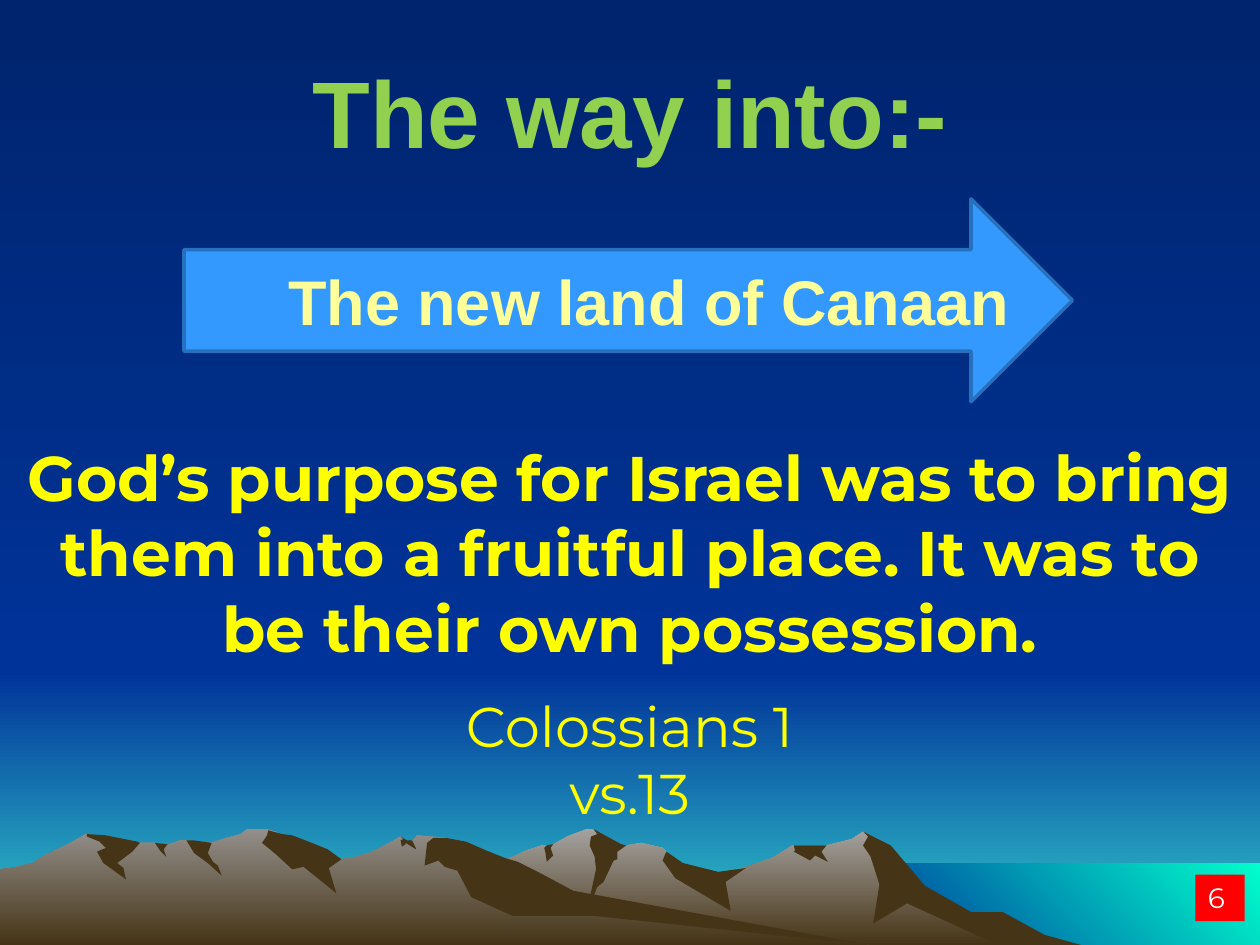
from dataclasses import dataclass

from pptx import Presentation
from pptx.dml.color import RGBColor
from pptx.enum.shapes import MSO_SHAPE
from pptx.enum.text import MSO_ANCHOR, PP_ALIGN
from pptx.util import Cm, Pt


@dataclass(frozen=True)
class Theme:
    """Colours, fonts and type sizes of the slide."""
    backdrop: tuple = ("001847", "003399")
    upper_sky: tuple = ("00246D", "003399")
    horizon: tuple = ("003399", "33CCCC")
    sea: tuple = ("003399", "00FFCC")
    far_range: tuple = ("A5A29F", "463416")
    near_range: tuple = ("938F8B", "463416")
    shade: str = "463416"
    heading: str = "92D050"
    arrow: str = "3399FF"
    arrow_edge: str = "2671BD"
    arrow_text: str = "FFFF99"
    verse: str = "FFFF00"
    badge: str = "FF0000"
    badge_text: str = "FFFFFF"
    plain: str = "Arial"
    display: str = "Montserrat"
    heading_size: int = 54
    main_size: int = 36
    reference_size: int = 32
    badge_size: int = 16


THEME = Theme()
GRID = Cm(2.54) / 100
DOWN, UP_RIGHT = 270, 45

SKY = [
    ([(0, 533), (1000, 533), (1000, 750), (0, 750)], THEME.horizon, DOWN),
    ([(0, 0), (1000, 0), (1000, 533), (0, 533)], THEME.upper_sky, DOWN),
    ([(683, 685), (1000, 685), (1000, 750), (683, 750)], THEME.sea, UP_RIGHT),
]
FAR_RANGE = [
    (802, 740), (778, 727), (764, 723), (723, 698), (702, 671), (685, 660), (676, 666),
    (656, 671), (629, 671), (613, 681), (566, 697), (536, 690), (529, 676), (526, 673),
    (509, 669), (497, 671), (486, 673), (474, 661), (471, 658), (465, 658), (450, 664),
    (438, 671), (430, 671), (418, 675), (405, 681), (394, 685), (355, 698), (327, 709),
    (277, 739), (258, 750), (820, 750),
]
FAR_SHADES = [
    [(796, 724), (771, 724), (734, 703), (707, 671), (685, 660), (689, 664), (685, 671),
     (691, 680), (698, 702), (693, 733), (720, 717), (792, 750), (858, 750), (829, 742)],
    [(471, 658), (474, 662), (469, 664), (468, 671), (472, 680), (473, 690), (465, 727),
     (474, 704), (479, 700), (487, 683), (490, 682), (490, 676), (497, 671), (493, 670)],
    [(529, 676), (528, 678), (526, 683), (536, 697), (580, 723), (576, 700), (592, 689),
     (570, 692), (542, 685)],
    [(650, 671), (630, 671), (631, 675), (630, 676), (643, 683), (647, 679), (657, 684),
     (652, 676), (656, 671)],
    [(433, 677), (432, 673), (434, 671), (439, 670), (437, 673), (439, 679), (434, 684)],
]
NEAR_RANGE = [
    (690, 750), (667, 748), (432, 712), (354, 665), (331, 663), (327, 668), (323, 668),
    (318, 664), (296, 676), (279, 681), (271, 682), (260, 676), (236, 681), (223, 663),
    (219, 660), (212, 658), (196, 658), (191, 662), (180, 665), (160, 671), (148, 667),
    (143, 667), (132, 671), (128, 671), (123, 669), (111, 669), (94, 671), (68, 662),
    (56, 669), (46, 674), (35, 679), (26, 685), (14, 688), (0, 690), (0, 750),
]
NEAR_SHADES = [
    [(212, 663), (208, 669), (219, 678), (232, 690), (241, 688), (267, 709), (261, 689),
     (271, 682), (260, 674), (245, 668), (232, 663), (224, 662), (213, 659)],
    [(370, 668), (354, 665), (344, 665), (339, 669), (337, 687), (348, 683), (353, 688),
     (363, 691), (374, 712), (407, 727), (472, 727), (690, 750), (455, 707), (427, 692),
     (411, 684), (401, 681), (386, 675)],
    [(318, 667), (320, 666), (318, 664), (323, 667), (327, 667), (330, 673), (330, 674),
     (322, 669), (322, 670), (319, 672)],
    [(154, 667), (168, 669), (165, 677), (169, 684), (173, 687), (176, 695), (165, 685),
     (154, 677), (148, 667)],
    [(133, 670), (130, 674), (132, 680), (127, 675), (123, 669)],
    [(109, 668), (111, 669), (105, 676), (93, 685), (98, 689), (100, 698), (82, 685),
     (77, 676), (84, 673), (79, 668), (69, 664), (69, 662), (84, 663), (94, 665)],
]


def rgb(value):
    """Turn a hex string into a colour."""
    return RGBColor.from_string(value)


def paint(fill, colours, angle=DOWN):
    """Apply a solid colour or a two-stop gradient to a fill."""
    if isinstance(colours, str):
        fill.solid()
        fill.fore_color.rgb = rgb(colours)
        return
    fill.gradient()
    fill.gradient_angle = angle
    for stop, colour in zip(fill.gradient_stops, colours):
        stop.color.rgb = rgb(colour)


def add_outline(slide, points, colours, angle=DOWN):
    """Draw a closed, borderless outline from grid points."""
    builder = slide.shapes.build_freeform(*points[0], scale=GRID)
    builder.add_line_segments(points[1:], close=True)
    outline = builder.convert_to_shape()
    outline.shadow.inherit = False
    outline.line.fill.background()
    paint(outline.fill, colours, angle)


def add_landscape(slide):
    """Draw the sky, the sea and the two mountain ranges."""
    for points, colours, angle in SKY:
        add_outline(slide, points, colours, angle)
    ranges = [(FAR_RANGE, THEME.far_range, FAR_SHADES),
              (NEAR_RANGE, THEME.near_range, NEAR_SHADES)]
    for ridge, colours, shades in ranges:
        add_outline(slide, ridge, colours)
        for shade in shades:
            add_outline(slide, shade, THEME.shade)


def write(holder, wording, colour, font, align=PP_ALIGN.CENTER, anchor=MSO_ANCHOR.TOP):
    """Put one formatted paragraph into a text holder."""
    frame = holder.text_frame
    frame.word_wrap = True
    frame.vertical_anchor = anchor
    paragraph = frame.paragraphs[0]
    paragraph.alignment = align
    run = paragraph.add_run()
    run.text = wording
    run.font.color.rgb = rgb(colour)
    for attribute, value in font.items():
        setattr(run.font, attribute, value)


def add_heading(slide, wording, box, font):
    """Place the title placeholder in front of the landscape."""
    heading = slide.shapes.title
    for attribute, value in zip(("left", "top", "width", "height"), box):
        setattr(heading, attribute, value)
    slide.shapes._spTree.append(heading._element)
    write(heading, wording, THEME.heading, font, anchor=MSO_ANCHOR.MIDDLE)


def add_panel(slide, preset, box, colour, edge=None):
    """Add a filled preset shape, with an edge if a colour is given."""
    panel = slide.shapes.add_shape(preset, *box)
    panel.shadow.inherit = False
    paint(panel.fill, colour)
    if edge:
        panel.line.color.rgb = rgb(edge)
        panel.line.width = Pt(2)
    else:
        panel.line.fill.background()
    return panel


def main():
    """Build and save the slide."""
    deck = Presentation()
    deck.slide_width, deck.slide_height = Cm(25.4), Cm(19.05)
    slide = deck.slides.add_slide(deck.slide_layouts[5])
    paint(slide.background.fill, THEME.backdrop)
    add_landscape(slide)

    heading_font = {"name": THEME.plain, "size": Pt(THEME.heading_size), "bold": True}
    arrow_font = {**heading_font, "size": Pt(THEME.main_size)}
    verse_font = {**arrow_font, "name": THEME.display}
    reference_font = {"name": THEME.display, "size": Pt(THEME.reference_size), "bold": False}
    badge_font = {**reference_font, "size": Pt(THEME.badge_size)}

    add_heading(slide, "The way into:-", (Cm(1.27), Cm(0.64), Cm(22.86), Cm(3.18)), heading_font)

    verse = slide.shapes.add_textbox(Cm(0), Cm(8.71), Cm(25.4), Cm(4.7))
    write(verse, "God’s purpose for Israel was to bring them into a fruitful place. "
          "It was to be their own possession.", THEME.verse, verse_font)

    arrow = add_panel(slide, MSO_SHAPE.RIGHT_ARROW, (Cm(3.71), Cm(4.01), Cm(17.91), Cm(4.09)),
                      THEME.arrow, THEME.arrow_edge)
    write(arrow, "The new land of Canaan", THEME.arrow_text, arrow_font,
          PP_ALIGN.RIGHT, MSO_ANCHOR.MIDDLE)

    badge = add_panel(slide, MSO_SHAPE.RECTANGLE, (Cm(24.1), Cm(17.63), Cm(0.99), Cm(0.94)),
                      THEME.badge)
    write(badge, "6", THEME.badge_text, badge_font, PP_ALIGN.LEFT)

    reference = slide.shapes.add_textbox(Cm(8.81), Cm(13.82), Cm(7.77), Cm(3))
    write(reference, "Colossians 1 vs.13", THEME.verse, reference_font)

    deck.save("out.pptx")


if __name__ == "__main__":
    main()
